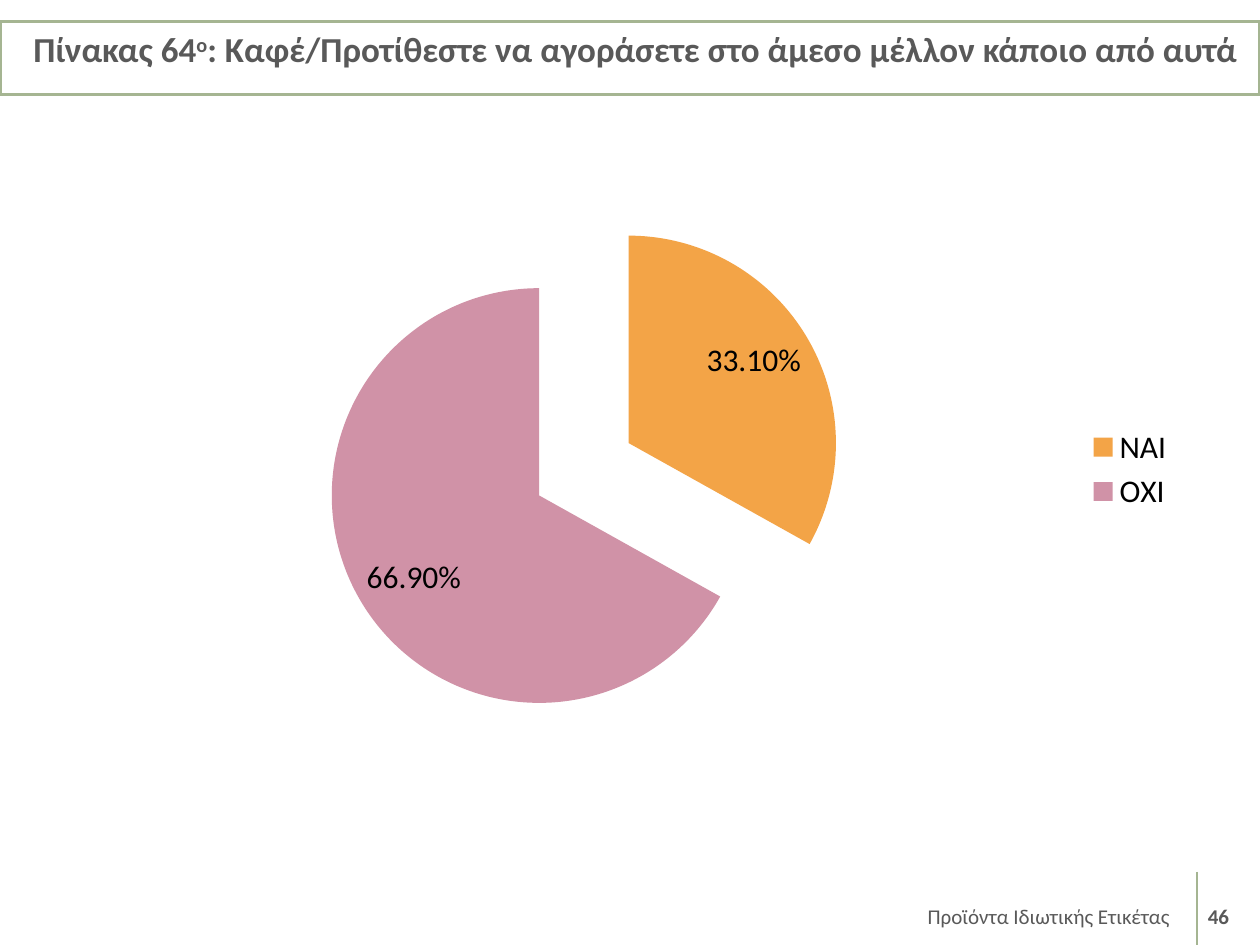
from lxml.etree import SubElement
from pptx import Presentation
from pptx.chart.data import CategoryChartData
from pptx.dml.color import RGBColor
from pptx.enum.chart import XL_CHART_TYPE, XL_LABEL_POSITION, XL_LEGEND_POSITION
from pptx.enum.shapes import MSO_CONNECTOR, MSO_SHAPE
from pptx.enum.text import MSO_ANCHOR, PP_ALIGN
from pptx.oxml import parse_xml
from pptx.oxml.ns import nsdecls, qn
from pptx.util import Inches, Pt

WHITE = RGBColor(0xFF, 0xFF, 0xFF)
BLACK = RGBColor(0, 0, 0)
GRAY = RGBColor(0x59, 0x59, 0x59)
GREEN = RGBColor(0xA5, 0xB5, 0x92)
ORANGE = RGBColor(0xF3, 0xA4, 0x47)
YELLOW = RGBColor(0xE7, 0xBC, 0x29)
PINK = RGBColor(0xD0, 0x92, 0xA7)
FONT = "Calibri"


def add_run(paragraph, text, size, bold=False):
    run = paragraph.add_run()
    run.text = text
    run.font.name = FONT
    run.font.size = Pt(size)
    run.font.bold = bold
    run.font.color.rgb = GRAY
    return run


presentation = Presentation()
presentation.slide_width = Inches(10)
presentation.slide_height = Inches(7.5)
slide = presentation.slides.add_slide(presentation.slide_layouts[6])

# Title bar
title = slide.shapes.add_shape(
    MSO_SHAPE.RECTANGLE, Inches(0), Inches(0.17), Inches(10), Inches(0.58))
title.shadow.inherit = False
title.fill.solid()
title.fill.fore_color.rgb = WHITE
title.line.color.rgb = GREEN
title.line.width = Pt(2)
title.text_frame.word_wrap = True
title.text_frame.vertical_anchor = MSO_ANCHOR.TOP
paragraph = title.text_frame.paragraphs[0]
paragraph.alignment = PP_ALIGN.CENTER
paragraph.space_before = Pt(6)
properties = paragraph._p.get_or_add_pPr()
properties.set("marL", str(Inches(0.4)))
properties.set("indent", str(Inches(-0.31)))
add_run(paragraph, "Πίνακας 64", 20, True)
ordinal = add_run(paragraph, "ο", 20, True)
ordinal.font._element.set("baseline", "30000")
add_run(paragraph, ": Καφέ/Προτίθεστε να αγοράσετε στο άμεσο μέλλον κάποιο από αυτά", 20, True)

# Pie chart; the unnamed categories are empty and hidden in the legend
categories = ["", "NAI", "", "OXI"]
chart_data = CategoryChartData(number_format="0.00%")
chart_data.categories = categories
chart_data.add_series("Series 1", [None, 0.331, None, 0.669])
chart = slide.shapes.add_chart(
    XL_CHART_TYPE.PIE, Inches(0.67), Inches(1.53), Inches(8.75), Inches(4.39), chart_data).chart
chart.has_title = False
chart.font.name = FONT
chart.font.size = Pt(18)
chart.font.color.rgb = BLACK

plot = chart.plots[0]
plot.vary_by_categories = True
series = plot.series[0]
explosion = parse_xml(f'<c:explosion {nsdecls("c")} val="25"/>')
series._element.find(qn("c:tx")).addnext(explosion)
for index, color in enumerate([GREEN, ORANGE, YELLOW, PINK]):
    fill = series.points[index].format.fill
    fill.solid()
    fill.fore_color.rgb = color

plot.has_data_labels = True
labels = plot.data_labels
labels.show_value = True
labels.show_percentage = False
labels.number_format = "0.00%"
labels.number_format_is_linked = False
labels.position = XL_LABEL_POSITION.INSIDE_END

chart.has_legend = True
legend = chart.legend
legend.position = XL_LEGEND_POSITION.RIGHT
legend.include_in_layout = False
previous = legend._element.find(qn("c:legendPos"))
for index, category in enumerate(categories):
    if not category:
        entry = parse_xml(
            f'<c:legendEntry {nsdecls("c")}><c:idx val="{index}"/><c:delete val="1"/></c:legendEntry>')
        previous.addnext(entry)
        previous = entry

# Footer
for left, width, text, alignment, bold in [
    (6.25, 3.17, "Προϊόντα Ιδιωτικής Ετικέτας ", PP_ALIGN.RIGHT, False),
    (9.42, 0.5, "46", PP_ALIGN.CENTER, True),
]:
    box = slide.shapes.add_textbox(Inches(left), Inches(6.9), Inches(width), Inches(0.52))
    box.text_frame.word_wrap = True
    box.text_frame.vertical_anchor = MSO_ANCHOR.BOTTOM
    paragraph = box.text_frame.paragraphs[0]
    paragraph.alignment = alignment
    add_run(paragraph, text, 12, bold)

divider = slide.shapes.add_connector(
    MSO_CONNECTOR.STRAIGHT, Inches(9.5), Inches(6.92), Inches(9.5), Inches(7.5))
divider.line.color.rgb = GREEN
divider.line.width = Pt(0.75)
SubElement(divider._element.spPr, qn("a:effectLst"))

presentation.save("out.pptx")
